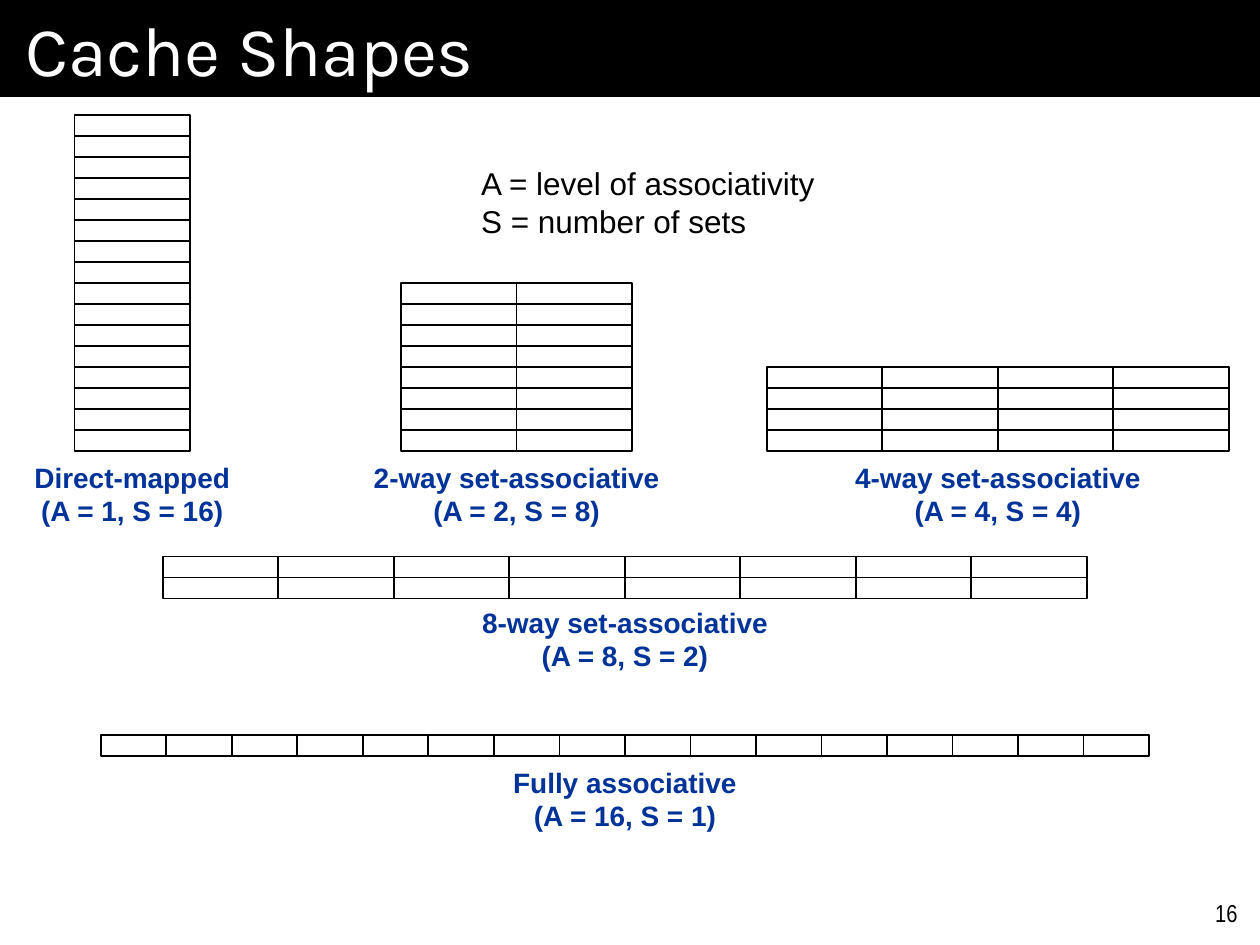
import pptx
import pptx.util
import pptx.dml.color
import pptx.enum.shapes
import pptx.enum.text
from pptx.util import Inches

ALIGN = pptx.enum.text.PP_ALIGN
ANCHOR = pptx.enum.text.MSO_ANCHOR
BLACK, WHITE, NAVY = "000000", "FFFFFF", "003399"
ROW_H = 1 / 6
WAY_W = 11 / 12


def color(value):
    return pptx.dml.color.RGBColor.from_string(value)


def paint(s, fill, line=None):
    s.fill.solid()
    s.fill.fore_color.rgb = color(fill)
    if line:
        s.line.color.rgb = color(line)
        s.line.width = pptx.util.Pt(1)


def write(tf, lines, size, font, ink, align=ALIGN.LEFT, bold=False):
    for i, line in enumerate(lines):
        p = tf.paragraphs[0] if i == 0 else tf.add_paragraph()
        p.alignment = align
        r = p.add_run()
        r.text = line
        r.font.size = pptx.util.Pt(size)
        r.font.name = font
        r.font.bold = bold
        r.font.color.rgb = color(ink)


def add_text(slide, box, lines, *style, wrap=False, anchor=ANCHOR.TOP, **options):
    tf = slide.shapes.add_textbox(*map(Inches, box)).text_frame
    tf.word_wrap = wrap
    tf.vertical_anchor = anchor
    if not wrap:
        tf.auto_size = pptx.enum.text.MSO_AUTO_SIZE.SHAPE_TO_FIT_TEXT
    write(tf, lines, *style, **options)


def add_title(slide, box, text):
    s = slide.shapes.title
    s.left, s.top, s.width, s.height = map(Inches, box)
    paint(s, BLACK)
    tf = s.text_frame
    tf.margin_left = tf.margin_right = Inches(0.2)
    tf.vertical_anchor = ANCHOR.MIDDLE
    tf.auto_size = pptx.enum.text.MSO_AUTO_SIZE.NONE
    write(tf, [text], 40, "Karla", WHITE)


def add_grid(slide, box, ways, sets):
    """Fill the box with one cell per way and set."""
    left, top, width, height = box
    group = slide.shapes.add_group_shape()
    cell_w, cell_h = width / ways, height / sets
    for way in range(ways):
        for row in range(sets):
            cell = group.shapes.add_shape(
                pptx.enum.shapes.MSO_SHAPE.RECTANGLE,
                Inches(left + way * cell_w), Inches(top + row * cell_h),
                Inches(cell_w), Inches(cell_h))
            cell.shadow.inherit = False
            paint(cell, WHITE, BLACK)


def add_cache(slide, center, bottom, ways, sets, way_w, name, caption_top, caption_w):
    """Place a cache grid and its caption around a shared centre line."""
    width, height = ways * way_w, sets * ROW_H
    add_grid(slide, (center - width / 2, bottom - height, width, height), ways, sets)
    add_text(slide, (center - caption_w / 2, caption_top, caption_w, 0.64),
             [name, f"(A = {ways}, S = {sets})"], 16, "Arial", NAVY,
             align=ALIGN.CENTER, bold=True, anchor=ANCHOR.MIDDLE)


def main():
    prs = pptx.Presentation()
    prs.slide_width, prs.slide_height = Inches(10), Inches(7.5)
    slide = prs.slides.add_slide(prs.slide_layouts[5])

    # Title bar
    add_title(slide, (0, 0, 10, 0.77), "Cache Shapes")

    # Caches: centre, bottom, ways, sets, way width, name, caption top and width
    caches = [
        (1.05, 3.58, 1, 16, WAY_W, "Direct-mapped", 3.6, 1.76),
        (4.1, 3.58, 2, 8, WAY_W, "2-way set-associative", 3.6, 2.48),
        (7.92, 3.58, 4, 4, WAY_W, "4-way set-associative", 3.6, 2.48),
        (4.96, 4.75, 8, 2, WAY_W, "8-way set-associative", 4.75, 2.48),
        (4.96, 6, 16, 1, 0.52, "Fully associative", 6.02, 1.98),
    ]
    for cache in caches:
        add_cache(slide, *cache)

    # Legend
    add_text(slide, (3.72, 1.25, 2.89, 0.71),
             ["A = level of associativity", "S = number of sets"], 18, "Arial", BLACK)

    # Slide number
    add_text(slide, (9.5, 7.08, 0.42, 0.33), ["16"], 14, "Arial Narrow", BLACK,
             align=ALIGN.RIGHT, wrap=True)

    prs.save("out.pptx")


if __name__ == "__main__":
    main()
